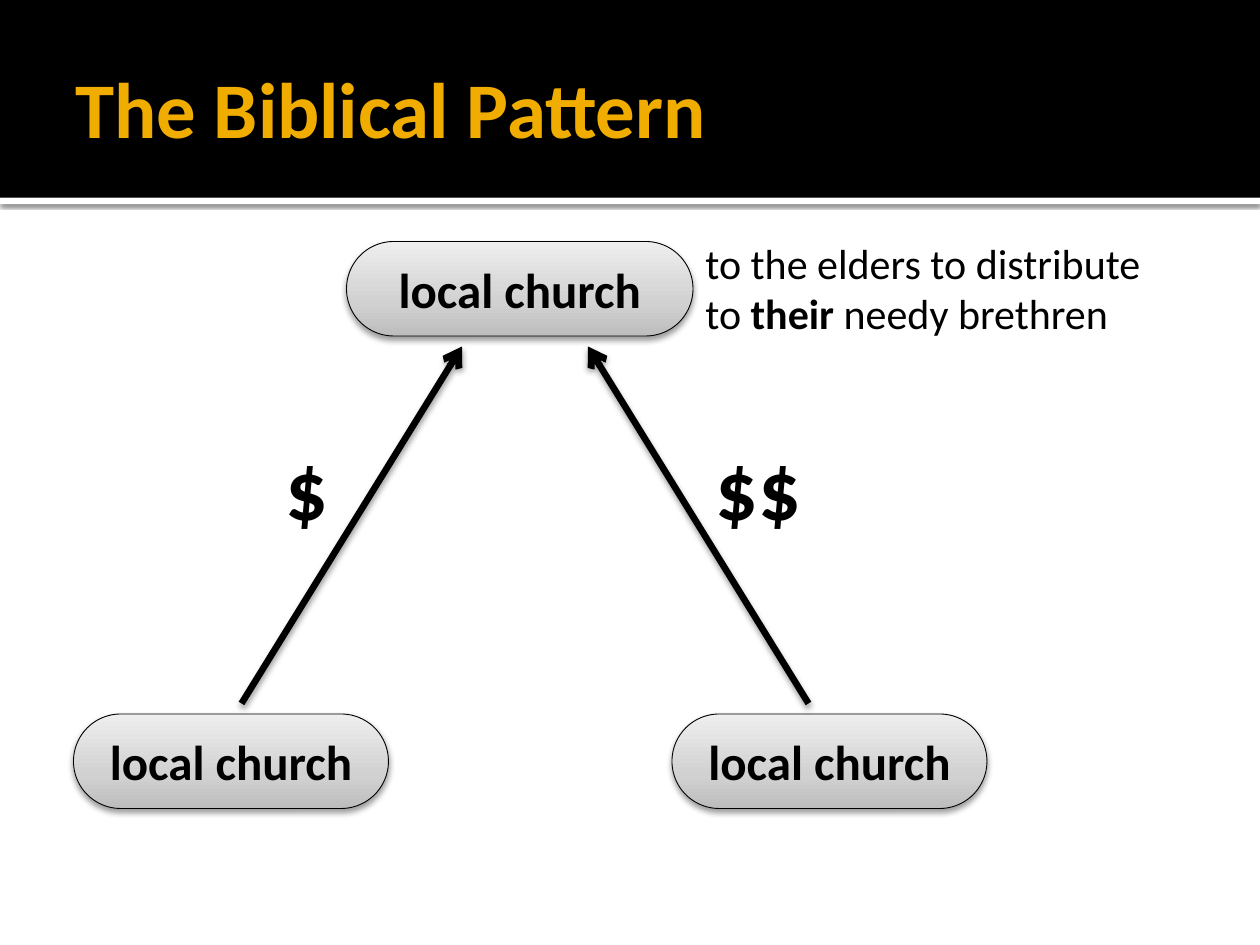
import pptx
import pptx.dml.color
import pptx.enum.shapes
import pptx.enum.text
import pptx.oxml
import pptx.oxml.ns
import pptx.util
from lxml import etree

BLACK = pptx.dml.color.RGBColor(0x00, 0x00, 0x00)
WHITE = pptx.dml.color.RGBColor(0xFF, 0xFF, 0xFF)
GOLD = pptx.dml.color.RGBColor(0xF0, 0xAD, 0x00)
GREY_STOPS = [
    (0, pptx.dml.color.RGBColor(0xBD, 0xBD, 0xBD)),
    (35, pptx.dml.color.RGBColor(0xD1, 0xD1, 0xD1)),
    (100, pptx.dml.color.RGBColor(0xEE, 0xEE, 0xEE)),
]
FONT = "Calibri"
SHAPES = pptx.enum.shapes.MSO_SHAPE
ANCHOR = pptx.enum.text.MSO_ANCHOR
qn = pptx.oxml.ns.qn


def grid(*cells):
    return [pptx.util.Inches(cell / 12) for cell in cells]


def add_color(parent, color):
    return etree.SubElement(parent, qn("a:srgbClr"), val=str(color))


def add_shadow(s, alpha, blur, dist):
    effects = etree.SubElement(s._element.spPr, qn("a:effectLst"))
    shadow = etree.SubElement(
        effects, qn("a:outerShdw"),
        blurRad=str(pptx.util.Pt(blur)), dist=str(pptx.util.Pt(dist)),
        dir="5400000", rotWithShape="0")
    etree.SubElement(add_color(shadow, BLACK), qn("a:alpha"), val=str(alpha * 1000))


def add_runs(tf, size, runs, color=BLACK):
    p = tf.paragraphs[0]
    for text, bold in runs:
        r = p.add_run()
        r.text = text
        r.font.name = FONT
        r.font.size = pptx.util.Pt(size)
        r.font.bold = bold
        r.font.color.rgb = color
    return p


def add_band(s, top, height, color):
    sp = s.shapes.add_shape(SHAPES.RECTANGLE, *grid(0, top, 120, height))
    sp.shadow.inherit = False
    sp.fill.solid()
    sp.fill.fore_color.rgb = color
    sp.line.fill.background()
    return sp


def add_header(s):
    rule = add_band(s, 18.84, 0.6, WHITE)
    rule._element.spPr.remove(rule._element.spPr.find(qn("a:effectLst")))
    add_shadow(rule, 60, 2.5, 0.8)
    add_band(s, 0, 18.84, BLACK)
    tf = add_text(s, (6, 2, 108, 16.44), 45, [("The Biblical Pattern", True)], color=GOLD)
    tf.vertical_anchor = ANCHOR.MIDDLE
    tf.margin_right = pptx.util.Inches(0.05)


def add_text(s, box, size, runs, wrap=True, color=BLACK):
    tf = s.shapes.add_textbox(*grid(*box)).text_frame
    tf.word_wrap = wrap
    add_runs(tf, size, runs, color)
    return tf


def add_church(s, left, top, width):
    sp = s.shapes.add_shape(SHAPES.ROUNDED_RECTANGLE, *grid(left, top, width, 9))
    sp.adjustments[0] = 0.5
    sp.fill.gradient()
    sp.fill.gradient_angle = 90
    stops = sp._element.spPr.find(".//" + qn("a:gsLst"))
    for stop in list(stops):
        stops.remove(stop)
    for position, color in GREY_STOPS:
        add_color(etree.SubElement(stops, qn("a:gs"), pos=str(position * 1000)), color)
    sp.line.color.rgb = BLACK
    sp.line.width = pptx.util.Pt(0.5)
    add_shadow(sp, 38, 3.5, 2)
    tf = sp.text_frame
    tf.vertical_anchor = ANCHOR.MIDDLE
    p = add_runs(tf, 28, [("local church", True)])
    p.alignment = pptx.enum.text.PP_ALIGN.CENTER


def add_arrow(s, start, end):
    line = s.shapes.add_connector(
        pptx.enum.shapes.MSO_CONNECTOR.STRAIGHT, *grid(*start, *end))
    line.line.color.rgb = BLACK
    line.line.width = pptx.util.Pt(3.78)
    etree.SubElement(line._element.spPr.find(qn("a:ln")), qn("a:tailEnd"), type="arrow")
    add_shadow(line, 38, 3.5, 2)


def main():
    prs = pptx.Presentation()
    prs.slide_width, prs.slide_height = grid(120, 90)
    s = prs.slides.add_slide(prs.slide_layouts[6])
    add_header(s)
    for left, top, width in [(33, 23, 33), (7, 68, 30), (64, 68, 30)]:
        add_church(s, left, top, width)
    for start, end in [(23, 44), (77, 56)]:
        add_arrow(s, (start, 67), (end, 33))
    for left, width, amount in [(26, 6.7, "$"), (67, 10.9, "$$")]:
        add_text(s, (left, 41, width, 10.9), 48, [(amount, True)], wrap=False)
    add_text(s, (66, 22, 45, 10.9), 24, [
        ("to the elders to distribute to ", False),
        ("their", True),
        (" needy brethren", False),
    ])
    prs.save("out.pptx")


if __name__ == "__main__":
    main()
